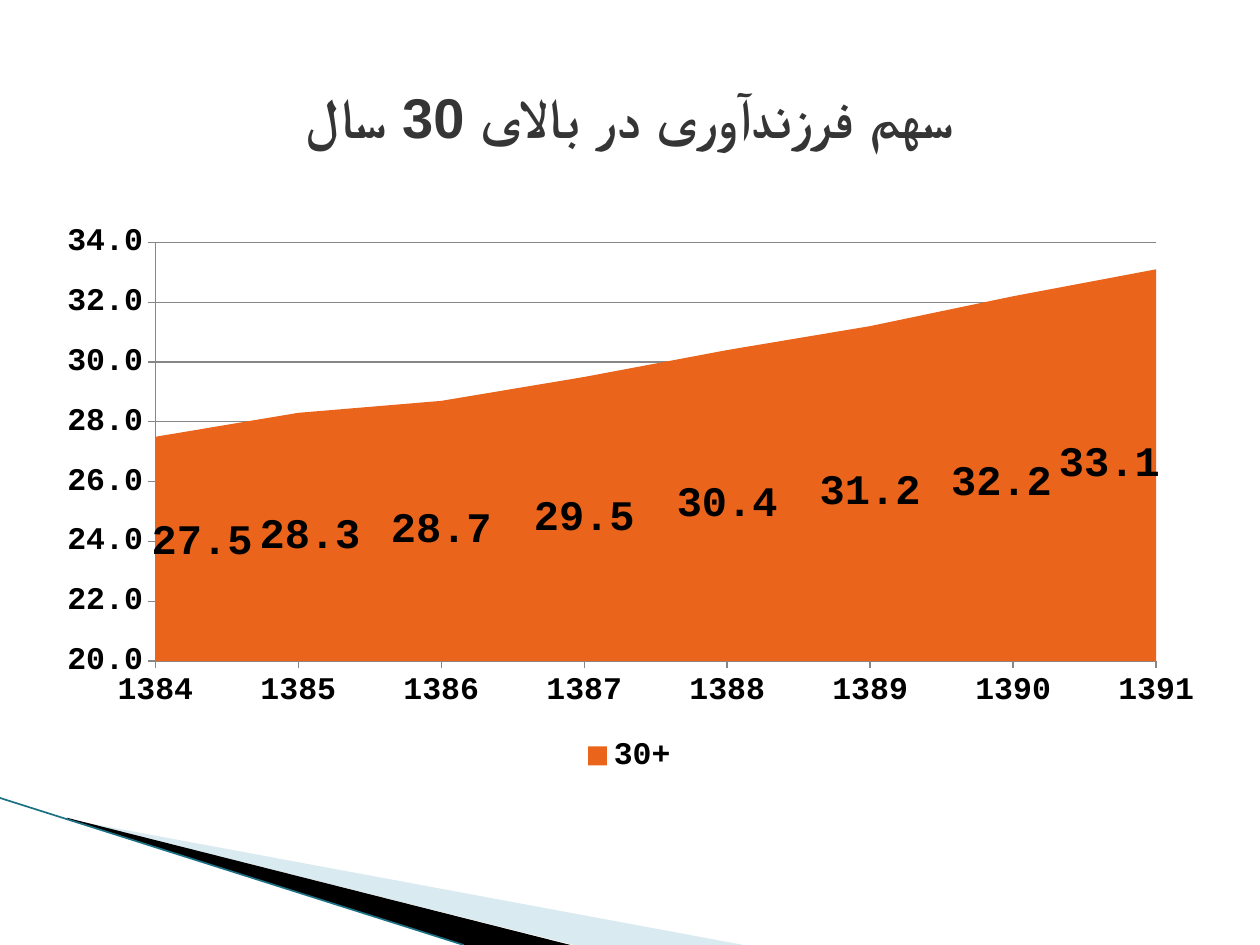
"""Build a slide with an area chart of the share of births above age 30."""
from collections import namedtuple

from lxml import etree
from pptx import Presentation
from pptx import util as u
from pptx.chart import data as cd
from pptx.dml import color as co
from pptx.enum import chart as ce, shapes, text
from pptx.oxml import ns

Theme = namedtuple("Theme", "font script ink black area grid pale edge head body label")
theme = Theme("Courier New", "Arial", "353535", "000000", "EB641B", "878787",
              "A0CBDC", "1B7083", 32, 18, 24)
Pt = u.Pt


def style(font, size, hue):
    font.name, font.size, font.bold = theme.font, Pt(size), True
    font.color.rgb = co.RGBColor.from_string(hue)


def place(node, **spots):
    layout = etree.Element(ns.qn("c:layout"))
    manual = etree.SubElement(layout, ns.qn("c:manualLayout"))
    for name, val in spots.items():
        etree.SubElement(manual, ns.qn("c:" + name)).set("val", str(val))
    for old in node.findall(ns.qn("c:layout")):
        node.remove(old)
    idx = node.find(ns.qn("c:idx"))
    node.insert(0 if idx is None else 1, layout)


prs = Presentation()
prs.slide_width, prs.slide_height = Pt(720), Pt(540)
slide = prs.slides.add_slide(prs.slide_layouts[6])

wedges = [
    (theme.pale, 40, [(39.6, 468.4), (424.8, 540), (328, 540), (39.6, 468)]),
    (theme.black, 100, [(38.2, 467.3), (326, 540), (265, 540), (38.9, 468)]),
]
for hue, alpha, spots in wedges:
    pts = [(Pt(x), Pt(y)) for x, y in spots]
    pen = slide.shapes.build_freeform(*pts[0], scale=1.0)
    pen.add_line_segments(pts[1:], close=True)
    wedge = pen.convert_to_shape()
    wedge.shadow.inherit = False
    wedge.fill.solid()
    wedge.fill.fore_color.rgb = co.RGBColor.from_string(hue)
    wedge.line.fill.background()
    if alpha < 100:
        tint = wedge.fill._xPr.find(".//" + ns.qn("a:srgbClr"))
        etree.SubElement(tint, ns.qn("a:alpha")).set("val", str(alpha * 1000))

edge = slide.shapes.add_connector(
    shapes.MSO_CONNECTOR.STRAIGHT, Pt(0), Pt(456), Pt(265), Pt(540))
edge.line.color.rgb = co.RGBColor.from_string(theme.edge)
edge.line.width = Pt(0.95)
etree.SubElement(edge._element.spPr, ns.qn("a:effectLst"))

title = slide.shapes.add_textbox(Pt(36), Pt(21.6), Pt(648), Pt(90))
frame = title.text_frame
frame.word_wrap = True
frame.vertical_anchor = text.MSO_ANCHOR.MIDDLE
para = frame.paragraphs[0]
para.alignment = text.PP_ALIGN.CENTER
para._p.get_or_add_pPr().set("rtl", "1")
run = para.add_run()
run.text = "سهم فرزندآوری در بالای 30 سال"
style(run.font, theme.head, theme.ink)
etree.SubElement(run._r.rPr, ns.qn("a:cs")).set("typeface", theme.script)

data = cd.CategoryChartData(number_format="0.0")
data.categories = [str(year) for year in range(1384, 1392)]
data.add_series("30+", (27.5, 28.3, 28.7, 29.5, 30.4, 31.2, 32.2, 33.1))
chart = slide.shapes.add_chart(
    ce.XL_CHART_TYPE.AREA, Pt(25.2), Pt(122.4), Pt(668.9), Pt(323.3), data).chart
style(chart.font, theme.body, theme.black)
chart.has_title = False
chart.has_legend = True
chart.legend.position = ce.XL_LEGEND_POSITION.BOTTOM
chart.legend.include_in_layout = False
place(chart._chartSpace.chart.plotArea, layoutTarget="inner", xMode="edge",
      yMode="edge", x=0.095, y=0.05, w=0.855, h=0.74)

years, share = chart.category_axis, chart.value_axis
share.minimum_scale, share.maximum_scale, share.major_unit = 20, 34, 2
share.has_major_gridlines = True
share.tick_labels.number_format = "0.0"
share.tick_labels.number_format_is_linked = False
share._element.find(ns.qn("c:crossBetween")).set("val", "midCat")
years.has_major_gridlines = False
for axis in (years, share):
    axis.major_tick_mark = ce.XL_TICK_MARK.OUTSIDE
    axis.minor_tick_mark = ce.XL_TICK_MARK.NONE
    style(axis.tick_labels.font, theme.body, theme.black)
for line in (years.format.line, share.format.line, share.major_gridlines.format.line):
    line.color.rgb = co.RGBColor.from_string(theme.grid)
    line.width = Pt(0.75)

births = chart.plots[0].series[0]
births.format.fill.solid()
births.format.fill.fore_color.rgb = co.RGBColor.from_string(theme.area)
labels = births.data_labels
labels.show_value = True
labels.number_format = "0.0"
labels.number_format_is_linked = False
style(labels.font, theme.label, theme.black)
shifts = {0: (0.04, -0.01), 1: (0.01, 0), 6: (-0.01, 0.01), 7: (-0.04, 0)}
for spot, (dx, dy) in shifts.items():
    style(births.points[spot].data_label.font, theme.label, theme.black)
    node = labels._element.xpath(f"c:dLbl[c:idx/@val='{spot}']")[0]
    place(node, x=dx, y=dy)

prs.save("out.pptx")
